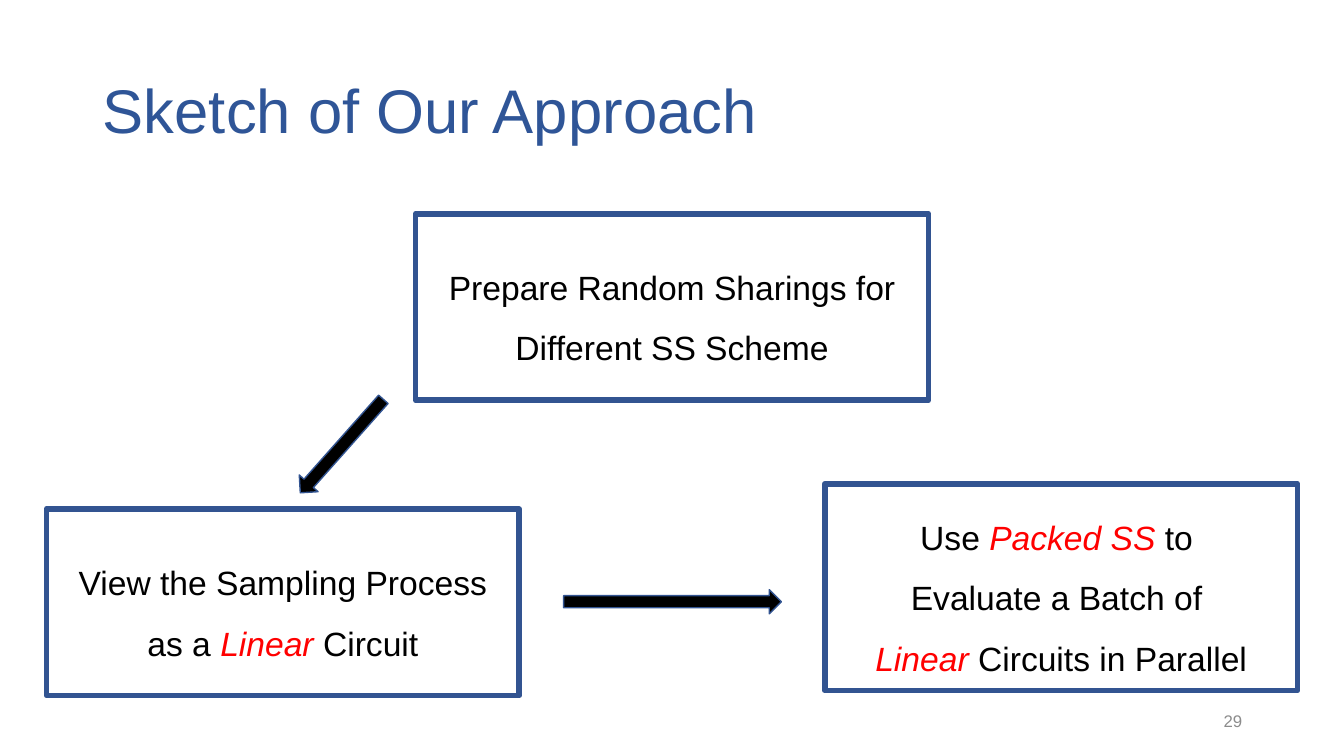
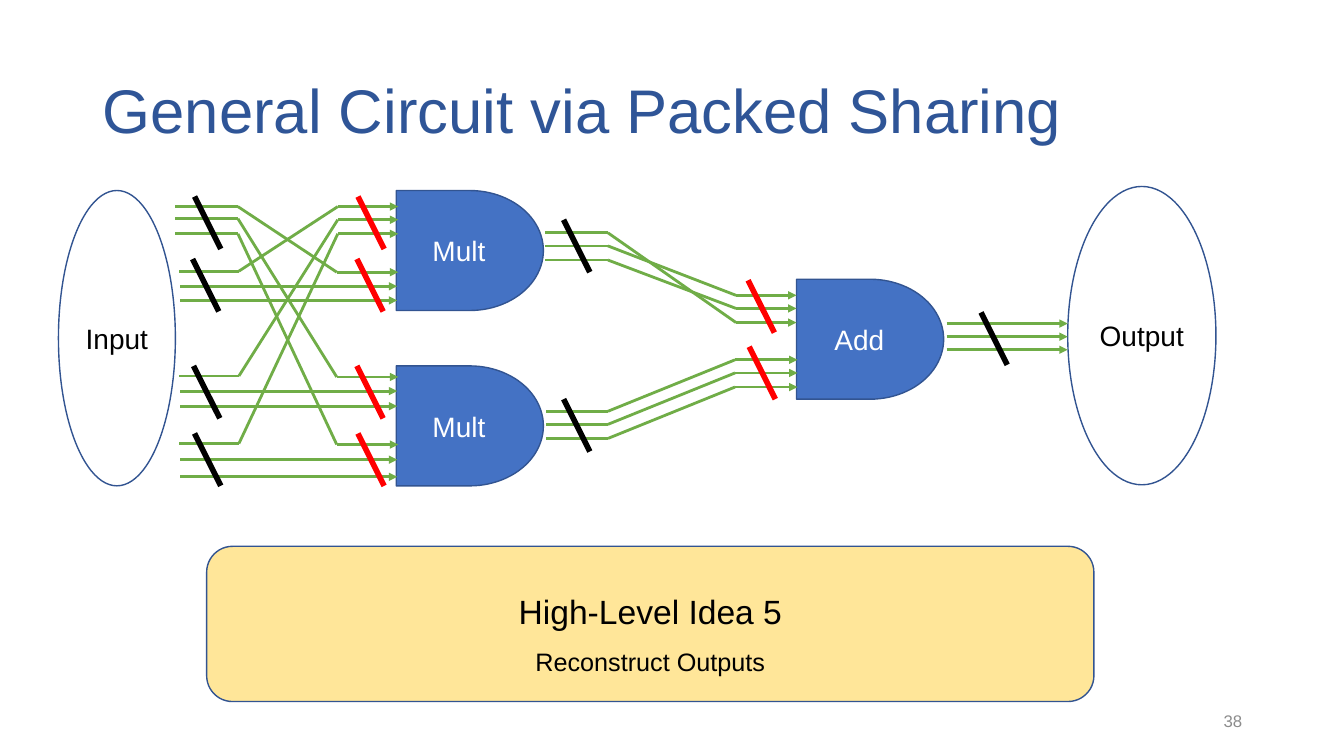
from itertools import pairwise

from lxml.etree import SubElement
from pptx import Presentation
from pptx.dml.color import RGBColor
from pptx.enum.shapes import MSO_CONNECTOR, MSO_SHAPE
from pptx.enum.text import MSO_ANCHOR, PP_ALIGN
from pptx.oxml.ns import qn
from pptx.util import Inches, Pt

# Shared style
FONT = "Arial"
TITLE_BLUE, EDGE, GATE_BLUE = "2F5597", "325491", "4472C4"
GREEN, RED, BLACK, WHITE = "70AD47", "FF0000", "000000", "FFFFFF"
GREY, SAND = "8C8C8C", "FFE699"
TITLE_AREA = (0.92, 0.4, 11.5, 1.45)
NUMBER_AREA = (9.42, 6.95, 3, 0.4)

# Slide 1: each paragraph is a list of runs, *starred* runs are emphasised
STEPS = [
    ((0.46, 5.05, 4.69, 1.85),
     [["View the Sampling Process as a ", "*Linear*", " Circuit"]]),
    ((4.12, 2.12, 5.09, 1.85),
     [["Prepare Random Sharings for Different SS Scheme"]]),
    ((8.18, 4.8, 4.69, 2.05),
     [["Use ", "*Packed SS *", "to "],
      ["Evaluate a Batch of "],
      ["*Linear*", " Circuits in Parallel"]]),
]
STEP_ARROWS = [((2.77, 4.3, 1.24, 0.25), 131.6), ((5.59, 5.85, 2.16, 0.24), 0)]

# Slide 2: circuit nodes
GATES = [("Mult", 3.93, 1.89), ("Mult", 3.93, 3.63), ("Add", 7.9, 2.77)]
GATE_SIZE = (1.46, 1.19)
TERMINALS = [("Input", (0.58, 1.89, 1.16, 2.93)),
             ("Output", (10.59, 1.85, 1.47, 2.96))]
IDEA_AREA = (2.05, 5.42, 8.8, 1.54)
IDEA = [("High-Level Idea 5", 24), ("Reconstruct Outputs", 18)]

# Wires of each layer: x of start, bends and end, then (start y, end y) pairs
BENT_WIRES = [
    ((1.74, 2.36, 3.34, 3.95), [(2.05, 2.7), (2.17, 3.74), (2.32, 4.41)]),
    ((1.78, 2.37, 3.35, 3.95), [(2.69, 2.05), (3.73, 2.18), (4.4, 2.32)]),
    ((5.41, 6.03, 7.3, 7.9), [(2.31, 3.2), (2.44, 2.93), (2.58, 3.06)]),
    ((5.42, 6.03, 7.29, 7.91), [(4.08, 3.57), (4.21, 3.7), (4.35, 3.84)]),
]
STRAIGHT_WIRES = [
    ((1.79, 3.94), [2.84, 2.98, 3.88, 4.03, 4.56, 4.73]),
    ((9.39, 10.59), [3.21, 3.34, 3.47]),
]

# Slashes bundle wires: black at a node's output, red at a gate's input
SLASH = (0.26, 0.52)
SLASHES = {
    RED: [(7.42, 2.78), (7.43, 3.44), (3.55, 1.95), (3.54, 2.57),
          (3.54, 3.63), (3.55, 4.3)],
    BLACK: [(5.59, 2.18), (5.59, 3.96), (9.73, 3.1), (1.93, 1.95),
            (1.91, 2.57), (1.92, 3.63), (1.93, 4.3)],
}


def color(hex_code):
    return RGBColor.from_string(hex_code)


def inches(values):
    return [Inches(value) for value in values]


def add_run(paragraph, text, size, ink, italic=False):
    run = paragraph.add_run()
    run.text = text
    run.font.name, run.font.size, run.font.italic = FONT, Pt(size), italic
    run.font.color.rgb = color(ink)


def add_paragraphs(frame, paragraphs, align=PP_ALIGN.CENTER, spacing=None):
    """Write paragraphs, each a list of (text, size, ink, italic) runs."""
    frame.word_wrap = True
    frame.vertical_anchor = MSO_ANCHOR.MIDDLE
    for index, runs in enumerate(paragraphs):
        paragraph = frame.add_paragraph() if index else frame.paragraphs[0]
        paragraph.alignment = align
        paragraph.line_spacing = spacing
        for run in runs:
            add_run(paragraph, *run)


def start_slide(deck, title, number):
    slide = deck.slides.add_slide(deck.slide_layouts.get_by_name("Title Only"))
    heading = slide.shapes.title
    heading.left, heading.top, heading.width, heading.height = inches(TITLE_AREA)
    add_paragraphs(heading.text_frame, [[(title, 44, TITLE_BLUE)]],
                   PP_ALIGN.LEFT, 0.9)
    footer = slide.shapes.add_textbox(*inches(NUMBER_AREA))
    add_paragraphs(footer.text_frame, [[(number, 12, GREY)]], PP_ALIGN.RIGHT)
    return slide


def add_node(slide, preset, area, fill=None, edge_width=1):
    node = slide.shapes.add_shape(preset, *inches(area))
    node.shadow.inherit = False
    if fill:
        node.fill.solid()
        node.fill.fore_color.rgb = color(fill)
    else:
        node.fill.background()
    node.line.color.rgb = color(EDGE)
    node.line.width = Pt(edge_width)
    return node


def add_line(slide, start, end, ink, width, arrow=False):
    line = slide.shapes.add_connector(MSO_CONNECTOR.STRAIGHT,
                                      *inches((*start, *end)))
    line.line.color.rgb = color(ink)
    line.line.width = Pt(width)
    if arrow:
        SubElement(line.line._get_or_add_ln(), qn("a:tailEnd"), type="triangle")
    SubElement(line._element.spPr, qn("a:effectLst"))


def add_wire(slide, points):
    """Draw a wire through the points, with an arrowhead at the last one."""
    for start, end in pairwise(points):
        add_line(slide, start, end, GREEN, 2, arrow=end == points[-1])


def styled_run(text):
    starred = text.startswith("*")
    return text.strip("*"), 24, RED if starred else BLACK, starred


def build_approach(deck):
    slide = start_slide(deck, "Sketch of Our Approach", "29")
    for area, paragraphs in STEPS:
        step = add_node(slide, MSO_SHAPE.RECTANGLE, area, edge_width=4)
        runs = [[styled_run(text) for text in texts] for texts in paragraphs]
        add_paragraphs(step.text_frame, runs, spacing=1.5)
    for area, angle in STEP_ARROWS:
        add_node(slide, MSO_SHAPE.RIGHT_ARROW, area, BLACK).rotation = angle


def build_circuit(deck):
    slide = start_slide(deck, "General Circuit via Packed Sharing", "38")

    # Gates and terminals
    for name, left, top in GATES:
        gate = add_node(slide, MSO_SHAPE.FLOWCHART_DELAY,
                        (left, top, *GATE_SIZE), GATE_BLUE)
        add_paragraphs(gate.text_frame, [[(name, 20, WHITE)]])
    for name, area in TERMINALS:
        terminal = add_node(slide, MSO_SHAPE.OVAL, area, WHITE)
        add_paragraphs(terminal.text_frame, [[(name, 20, BLACK)]])

    # Wires and slashes
    for columns, pairs in BENT_WIRES:
        for start_y, end_y in pairs:
            rows = (start_y, start_y, end_y, end_y)
            add_wire(slide, list(zip(columns, rows)))
    for columns, rows in STRAIGHT_WIRES:
        for y in rows:
            add_wire(slide, [(x, y) for x in columns])
    for ink, corners in SLASHES.items():
        for x, y in corners:
            add_line(slide, (x, y), (x + SLASH[0], y + SLASH[1]), ink, 4)

    # Key idea
    idea = add_node(slide, MSO_SHAPE.ROUNDED_RECTANGLE, IDEA_AREA, SAND)
    add_paragraphs(idea.text_frame,
                   [[(text, size, BLACK)] for text, size in IDEA], spacing=1.5)


def main():
    deck = Presentation()
    deck.slide_width, deck.slide_height = inches((13.33, 7.5))
    build_approach(deck)
    build_circuit(deck)
    deck.save("out.pptx")


if __name__ == "__main__":
    main()
